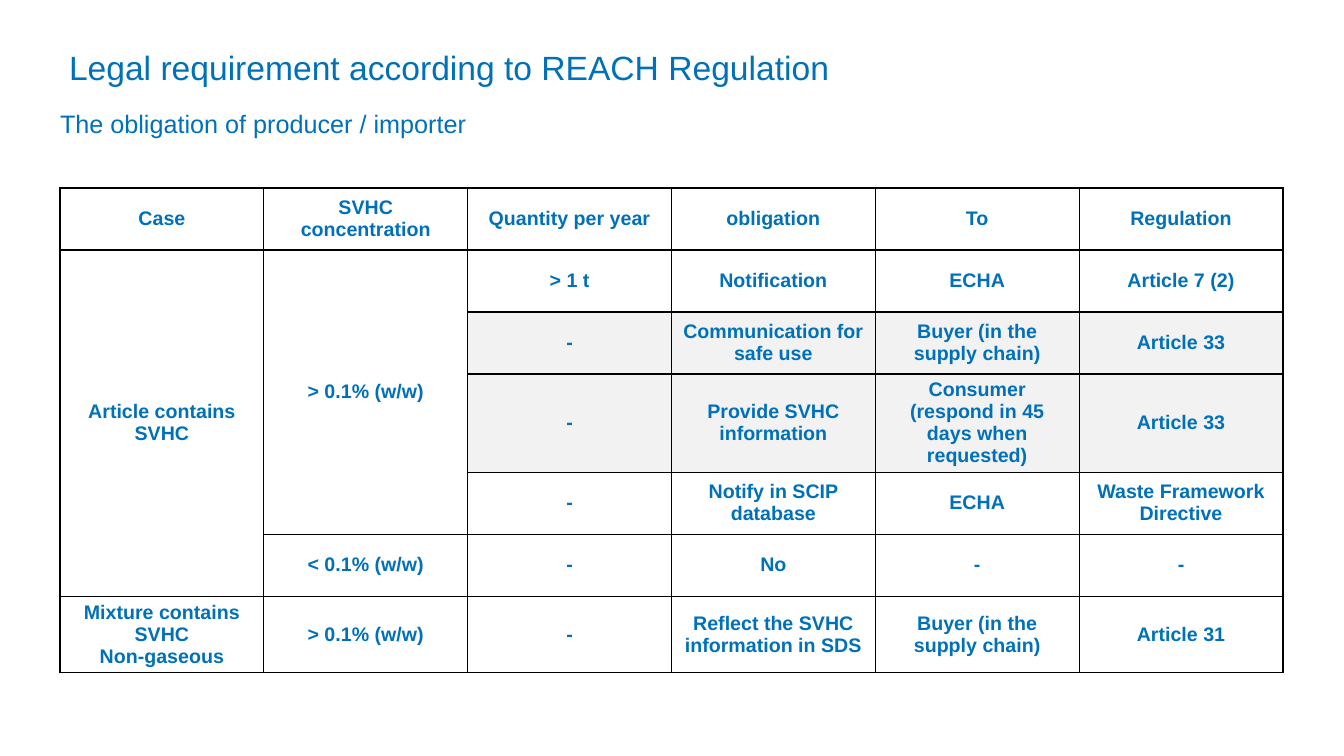
from lxml.etree import SubElement
from pptx import Presentation
from pptx.dml.color import RGBColor
from pptx.enum.text import MSO_ANCHOR, MSO_AUTO_SIZE, PP_ALIGN
from pptx.oxml.ns import qn
from pptx.util import Emu, Pt

# Content
TITLE = "Legal requirement according to REACH Regulation"
SUBTITLE = "The obligation of producer / importer"
ROWS = [
    ["Case", "SVHC concentration", "Quantity per year", "obligation", "To", "Regulation"],
    ["Article contains SVHC", "> 0.1% (w/w)", "> 1 t", "Notification", "ECHA", "Article 7 (2)"],
    [None, None, "-", "Communication for safe use", "Buyer (in the supply chain)", "Article 33"],
    [None, None, "-", "Provide SVHC information",
     "Consumer (respond in 45 days when requested)", "Article 33"],
    [None, None, "-", "Notify in SCIP database", "ECHA", "Waste Framework Directive"],
    [None, "< 0.1% (w/w)", "-", "No", "-", "-"],
    ["Mixture contains SVHC\nNon-gaseous", "> 0.1% (w/w)", "-",
     "Reflect the SVHC information in SDS", "Buyer (in the supply chain)", "Article 31"],
]
MERGES = [((1, 0), (5, 0)), ((1, 1), (4, 1))]
SHADED_ROWS = (2, 3)

# Layout in px
PAGE = (1344, 756)
LEFT, WIDTH = 60, 1223
TITLE_TOP, TITLE_HEIGHT, TITLE_INDENT = 44, 47, 9
SUBTITLE_TOP, SUBTITLE_HEIGHT = 108, 55
TABLE_TOP = 188
ROW_HEIGHTS = [62, 62, 62, 67, 62, 62, 67]

FONT, BLUE, BLACK, WHITE, GRAY = "Arial", "0071B9", "000000", "FFFFFF", "F2F2F2"


def px(length):
    return Emu(round(length * 914400 / 100.8))


def color(value):
    return RGBColor.from_string(value)


def write(frame, text, size, bold=False, align=PP_ALIGN.LEFT, after=0):
    frame.text = text
    for para in frame.paragraphs:
        para.alignment = align
        para.space_before = Pt(0)
        para.space_after = Pt(after)
        for span in para.runs:
            span.font.name = FONT
            span.font.size = Pt(size)
            span.font.bold = bold
            span.font.color.rgb = color(BLUE)


def place(shape, top, height, anchor, indent=0):
    shape.left, shape.top, shape.width, shape.height = map(px, (LEFT, top, WIDTH, height))
    frame = shape.text_frame
    frame.margin_left = px(indent)
    frame.margin_right = frame.margin_top = frame.margin_bottom = 0
    frame.vertical_anchor = anchor
    frame.word_wrap = True
    frame.auto_size = MSO_AUTO_SIZE.NONE
    return frame


def add_borders(cell):
    properties = cell._tc.get_or_add_tcPr()
    for side in ("a:lnL", "a:lnR", "a:lnT", "a:lnB"):
        line = SubElement(properties, qn(side), w=str(Pt(1)))
        fill = SubElement(line, qn("a:solidFill"))
        SubElement(fill, qn("a:srgbClr"), val=BLACK)


deck = Presentation()
deck.slide_width, deck.slide_height = map(px, PAGE)
page = deck.slides.add_slide(deck.slide_layouts[1])

# Title and subtitle
title, body = page.shapes.title, page.placeholders[1]
write(place(title, TITLE_TOP, TITLE_HEIGHT, MSO_ANCHOR.MIDDLE, TITLE_INDENT), TITLE, 24)
subtitle = place(body, SUBTITLE_TOP, SUBTITLE_HEIGHT, MSO_ANCHOR.TOP)
write(subtitle, SUBTITLE, 18, after=6)
bullet_format = subtitle.paragraphs[0]._p.get_or_add_pPr()
bullet_format.set("marL", "0")
bullet_format.set("indent", "0")
SubElement(bullet_format, qn("a:buNone"))

# Table of obligations
table = page.shapes.add_table(
    len(ROWS), len(ROWS[0]), px(LEFT), px(TABLE_TOP), px(WIDTH), px(sum(ROW_HEIGHTS))
).table
table.first_row = table.horz_banding = False
for column in table.columns:
    column.width = px(WIDTH / len(ROWS[0]))
for row, height in zip(table.rows, ROW_HEIGHTS):
    row.height = px(height)
for first, last in MERGES:
    table.cell(*first).merge(table.cell(*last))
for row_number, texts in enumerate(ROWS):
    for column_number, text in enumerate(texts):
        cell = table.cell(row_number, column_number)
        add_borders(cell)
        shaded = row_number in SHADED_ROWS and text is not None
        cell.fill.solid()
        cell.fill.fore_color.rgb = color(GRAY if shaded else WHITE)
        cell.vertical_anchor = MSO_ANCHOR.MIDDLE
        if text is not None:
            write(cell.text_frame, text, 14, bold=True, align=PP_ALIGN.CENTER)

deck.save("out.pptx")
